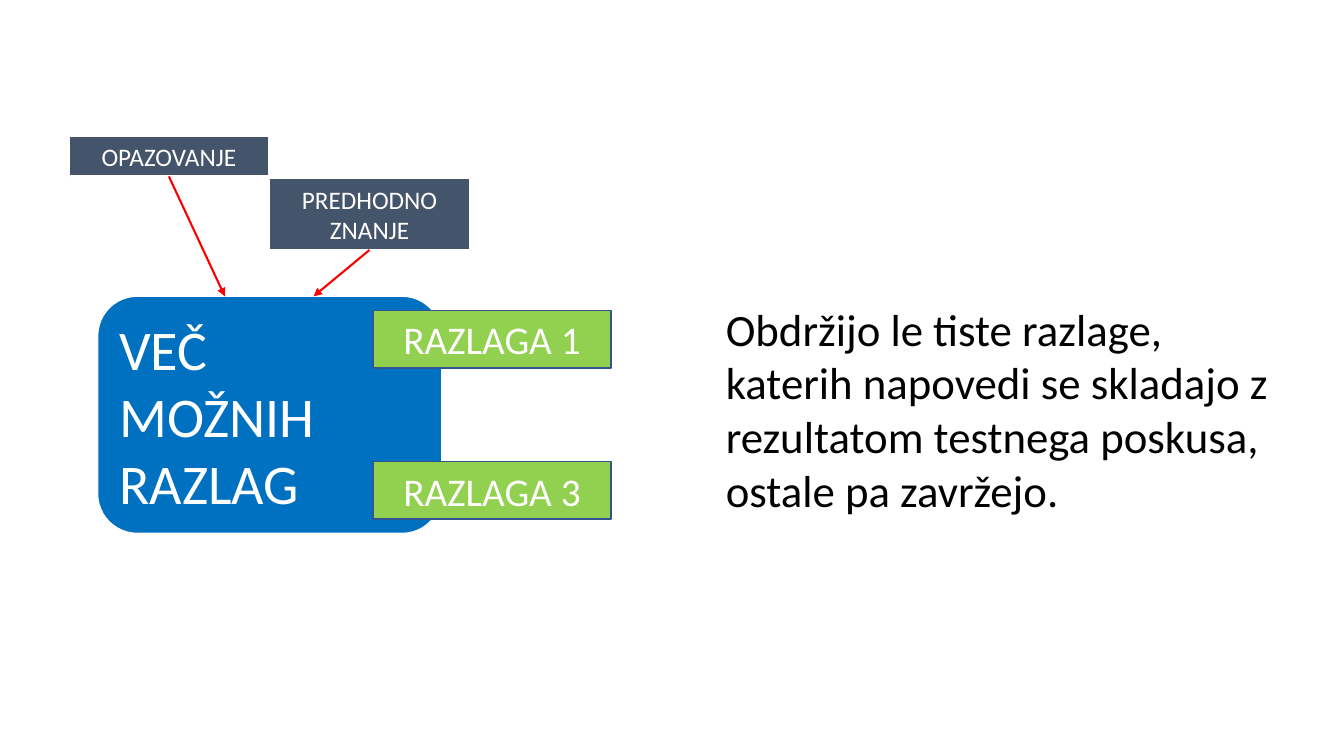
from lxml import etree
from pptx import Presentation
from pptx.dml.color import RGBColor
from pptx.enum.shapes import MSO_CONNECTOR, MSO_SHAPE
from pptx.enum.text import MSO_ANCHOR, PP_ALIGN
from pptx.oxml.ns import qn
from pptx.util import Inches, Pt

RECTANGLE = MSO_SHAPE.RECTANGLE
ROUNDED = MSO_SHAPE.ROUNDED_RECTANGLE
STRAIGHT = MSO_CONNECTOR.STRAIGHT
LEFT, CENTER = PP_ALIGN.LEFT, PP_ALIGN.CENTER
TOP, MIDDLE = MSO_ANCHOR.TOP, MSO_ANCHOR.MIDDLE

FONT = "Calibri"
WHITE, BLACK, RED = "FFFFFF", "000000", "FF0000"
SLATE, BLUE, GREEN, NAVY = "44546A", "0070C0", "92D050", "325491"


def color(hex_string):
    return RGBColor.from_string(hex_string)


def write_text(shape, lines, size, text_color, alignment, anchor):
    frame = shape.text_frame
    frame.word_wrap = True
    frame.vertical_anchor = anchor
    for index, line in enumerate(lines):
        paragraph = frame.paragraphs[0] if index == 0 else frame.add_paragraph()
        paragraph.alignment = alignment
        run = paragraph.add_run()
        run.text = line
        run.font.name = FONT
        run.font.size = Pt(size)
        run.font.color.rgb = color(text_color)


def add_box(slide, box, lines, size, fill, outline, outline_width,
            kind=RECTANGLE, alignment=CENTER):
    shape = slide.shapes.add_shape(kind, *map(Inches, box))
    shape.shadow.inherit = False
    shape.fill.solid()
    shape.fill.fore_color.rgb = color(fill)
    shape.line.color.rgb = color(outline)
    shape.line.width = Pt(outline_width)
    write_text(shape, lines, size, WHITE, alignment, MIDDLE)


def add_arrow(slide, start, end):
    arrow = slide.shapes.add_connector(STRAIGHT, *map(Inches, start + end))
    arrow.line.color.rgb = color(RED)
    arrow.line.width = Pt(1.5)
    etree.SubElement(arrow.line._get_or_add_ln(), qn("a:tailEnd"), type="triangle")
    etree.SubElement(arrow._element.spPr, qn("a:effectLst"))


def add_explanations(slide, box):
    """Draw the pool of explanations with the two that remain on its right edge."""
    left, top, width, height = box
    add_box(slide, box, ["VEČ", "MOŽNIH", "RAZLAG"], 40, BLUE, WHITE, 0.75,
            ROUNDED, LEFT)
    label_width, label_height, margin = 2.36, 0.57, 0.14
    label_left = left + width - 0.68
    rows = {"RAZLAGA 1": top + margin,
            "RAZLAGA 3": top + height - margin - label_height}
    for label, label_top in rows.items():
        add_box(slide, (label_left, label_top, label_width, label_height),
                [label], 28, GREEN, NAVY, 1)


def add_source(slide, box, label, target):
    """Draw a source of explanations and its arrow to the target point."""
    left, top, width, height = box
    add_box(slide, box, [label], 18, SLATE, WHITE, 1.5)
    add_arrow(slide, (left + width / 2, top + height), target)


def add_conclusion(slide, box):
    text_box = slide.shapes.add_textbox(*map(Inches, box))
    write_text(text_box, ["Obdržijo le tiste razlage, katerih napovedi se skladajo z "
                          "rezultatom testnega poskusa, ostale pa zavržejo."],
               32, BLACK, LEFT, TOP)


def main():
    presentation = Presentation()
    presentation.slide_width = Inches(13.33)
    presentation.slide_height = Inches(7.5)
    slide = presentation.slides.add_slide(presentation.slide_layouts[6])

    pool_top = 2.94
    add_conclusion(slide, (7.1, pool_top, 5.69, 2.26))
    add_explanations(slide, (0.97, pool_top, 3.41, 2.35))
    add_source(slide, (0.68, 1.35, 1.99, 0.4), "OPAZOVANJE", (2.23, pool_top))
    add_source(slide, (2.67, 1.77, 1.99, 0.71), "PREDHODNO ZNANJE", (3.11, pool_top))
    presentation.save("out.pptx")


if __name__ == "__main__":
    main()
